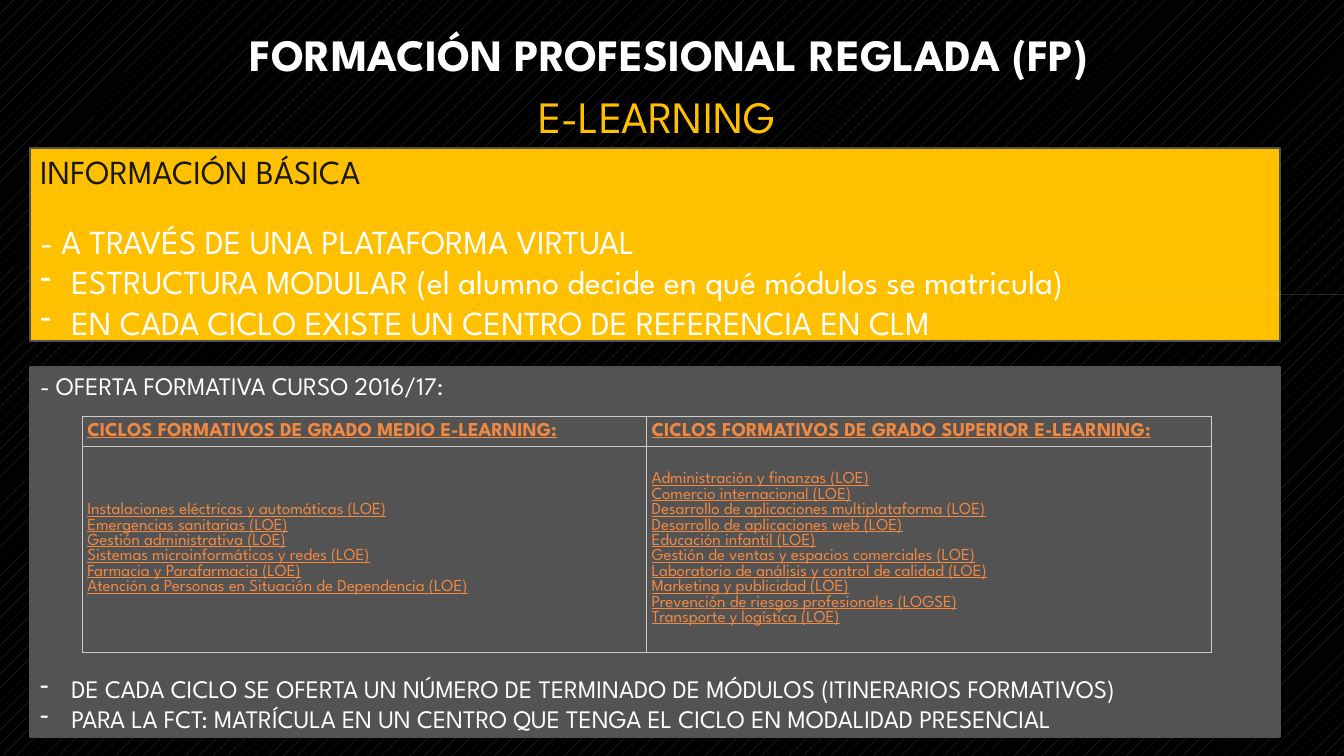
from dataclasses import dataclass

from lxml.etree import SubElement
from pptx import Presentation
from pptx.dml.color import RGBColor
from pptx.enum.dml import MSO_PATTERN
from pptx.enum.shapes import MSO_CONNECTOR, MSO_SHAPE
from pptx.enum.text import MSO_ANCHOR, PP_ALIGN
from pptx.oxml import parse_xml
from pptx.oxml.ns import nsdecls, qn
from pptx.util import Cm, Pt


@dataclass(frozen=True)
class Theme:
    font: str = "League Spartan"
    black: str = "000000"
    pattern: str = "363D46"
    white: str = "FFFFFF"
    yellow: str = "FFC000"
    ink: str = "181818"
    panel: str = "535353"
    outline: str = "525252"
    link: str = "F28943"
    border: str = "CCCCCC"
    rule: str = "EAEDF2"
    title_size: int = 32
    info_size: int = 24
    offer_size: int = 18
    header_size: int = 14
    cycle_size: int = 12


theme = Theme()


def style(para, size, color, bold=False, underline=False):
    font = para.font
    font.name = theme.font
    font.size = Pt(size)
    font.bold = bold
    font.underline = underline
    font.color.rgb = RGBColor.from_string(color)


def add_lines(frame, lines, size, spacing):
    for index, (text, color, bulleted, gap) in enumerate(lines):
        para = frame.paragraphs[0] if index == 0 else frame.add_paragraph()
        para.text = text
        para.alignment = PP_ALIGN.LEFT
        if bulleted:
            properties = para._p.get_or_add_pPr()
            properties.set("marL", str(Cm(0.79)))
            properties.set("indent", str(-Cm(0.79)))
            SubElement(properties, qn("a:buChar"), char="-")
        para.line_spacing = Pt(spacing)
        para.space_before = Pt(gap)
        style(para, size, color)


deck = Presentation()
deck.slide_width = Cm(33.87)
deck.slide_height = Cm(19.05)
page = deck.slides.add_slide(deck.slide_layouts[6])
backdrop = page.background.fill
backdrop.patterned()
backdrop.pattern = MSO_PATTERN.PERCENT_5
backdrop.fore_color.rgb = RGBColor.from_string(theme.pattern)
backdrop.back_color.rgb = RGBColor.from_string(theme.black)

headings = [
    ("FORMACIÓN PROFESIONAL REGLADA (FP)", 3.12, 0.25, 27.51, 2.18, theme.white, True, PP_ALIGN.CENTER),
    ("E-LEARNING", 13.31, 2.11, 7.11, 1.63, theme.yellow, False, PP_ALIGN.LEFT),
]
for text, left, top, width, height, color, bold, alignment in headings:
    box = page.shapes.add_textbox(Cm(left), Cm(top), Cm(width), Cm(height))
    frame = box.text_frame
    frame.word_wrap = True
    frame.vertical_anchor = MSO_ANCHOR.MIDDLE
    para = frame.paragraphs[0]
    para.text = text
    para.alignment = alignment
    style(para, theme.title_size, color, bold)

info_lines = [
    ("INFORMACIÓN BÁSICA", theme.ink, False, 0),
    ("- A TRAVÉS DE UNA PLATAFORMA VIRTUAL", theme.white, False, 22),
    ("ESTRUCTURA MODULAR (el alumno decide en qué módulos se matricula)", theme.white, True, 0),
    ("EN CADA CICLO EXISTE UN CENTRO DE REFERENCIA EN CLM", theme.white, True, 0),
]
offer_lines = [
    ("- OFERTA FORMATIVA CURSO 2016/17:", theme.white, False, 0),
    ("DE CADA CICLO SE OFERTA UN NÚMERO DE TERMINADO DE MÓDULOS (ITINERARIOS FORMATIVOS)", theme.white, True, 195),
    ("PARA LA FCT: MATRÍCULA EN UN CENTRO QUE TENGA EL CICLO EN MODALIDAD PRESENCIAL", theme.white, True, 0),
]
panels = [
    (3.74, 4.85, theme.yellow, info_lines, theme.info_size, 28.6, 0.06),
    (9.26, 9.32, theme.panel, offer_lines, theme.offer_size, 21.4, 0.09),
]
for top, height, fill, lines, size, spacing, inset in panels:
    panel = page.shapes.add_shape(MSO_SHAPE.RECTANGLE, Cm(0.76), Cm(top), Cm(31.5), Cm(height))
    panel.shadow.inherit = False
    panel.fill.solid()
    panel.fill.fore_color.rgb = RGBColor.from_string(fill)
    panel.line.color.rgb = RGBColor.from_string(theme.outline)
    panel.line.width = Pt(1.5)
    frame = panel.text_frame
    frame.word_wrap = True
    frame.vertical_anchor = MSO_ANCHOR.TOP
    frame.margin_top = Cm(inset)
    frame.margin_bottom = Cm(0)
    add_lines(frame, lines, size, spacing)

columns = [
    ("CICLOS FORMATIVOS DE GRADO MEDIO E-LEARNING:", [
        "Instalaciones eléctricas y automáticas (LOE)",
        "Emergencias sanitarias (LOE)",
        "Gestión administrativa (LOE)",
        "Sistemas microinformáticos y redes (LOE)",
        "Farmacia y Parafarmacia (LOE)",
        "Atención a Personas en Situación de Dependencia (LOE)",
    ]),
    ("CICLOS FORMATIVOS DE GRADO SUPERIOR E-LEARNING:", [
        "Administración y finanzas (LOE)",
        "Comercio internacional (LOE)",
        "Desarrollo de aplicaciones multiplataforma (LOE)",
        "Desarrollo de aplicaciones web (LOE)",
        "Educación infantil (LOE)",
        "Gestión de ventas y espacios comerciales (LOE)",
        "Laboratorio de análisis y control de calidad (LOE)",
        "Marketing y publicidad (LOE)",
        "Prevención de riesgos profesionales (LOGSE)",
        "Transporte y logística (LOE)",
    ]),
]
row_heights = [Cm(0.76), Cm(5.18)]
table = page.shapes.add_table(2, 2, Cm(2.08), Cm(10.49), Cm(28.44), sum(row_heights)).table
table.first_row = False
table.horz_banding = False
for row, height in zip(table.rows, row_heights):
    row.height = height
for column, (header, cycles) in enumerate(columns):
    for row, texts in enumerate([[header], cycles]):
        cell = table.cell(row, column)
        cell.fill.background()
        cell.vertical_anchor = MSO_ANCHOR.MIDDLE
        cell.margin_left = cell.margin_right = Cm(0.12)
        cell.margin_top = cell.margin_bottom = Cm(0.05)
        cell.text_frame.text = "\n".join(texts)
        is_header = row == 0
        for para in cell.text_frame.paragraphs:
            size = theme.header_size if is_header else theme.cycle_size
            para.line_spacing = Pt(size - 1)
            style(para, size, theme.link, is_header, True)
        for position, side in enumerate(["lnL", "lnR", "lnT", "lnB"]):
            border = parse_xml(
                f'<a:{side} {nsdecls("a")} w="{Pt(0.75)}"><a:solidFill>'
                f'<a:srgbClr val="{theme.border}"/></a:solidFill></a:{side}>'
            )
            cell._tc.get_or_add_tcPr().insert(position, border)

rule = page.shapes.add_connector(MSO_CONNECTOR.STRAIGHT, Cm(26.8), Cm(7.42), Cm(33.87), Cm(7.42))
rule.line.width = Pt(0.5)
rule.line.color.rgb = RGBColor.from_string(theme.rule)
rule_color = rule.line._ln.find(".//" + qn("a:srgbClr"))
SubElement(rule_color, qn("a:alpha"), val="15000")
SubElement(rule._element.spPr, qn("a:effectLst"))

deck.save("out.pptx")
